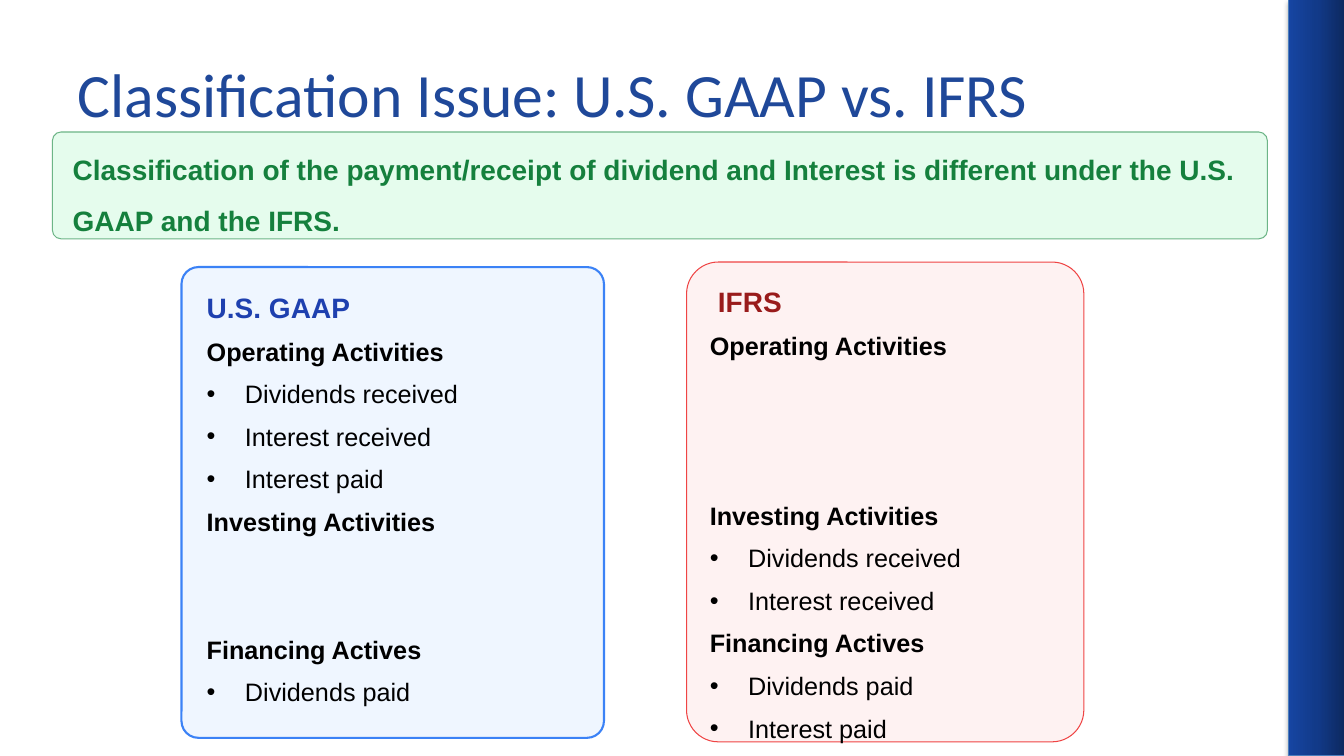
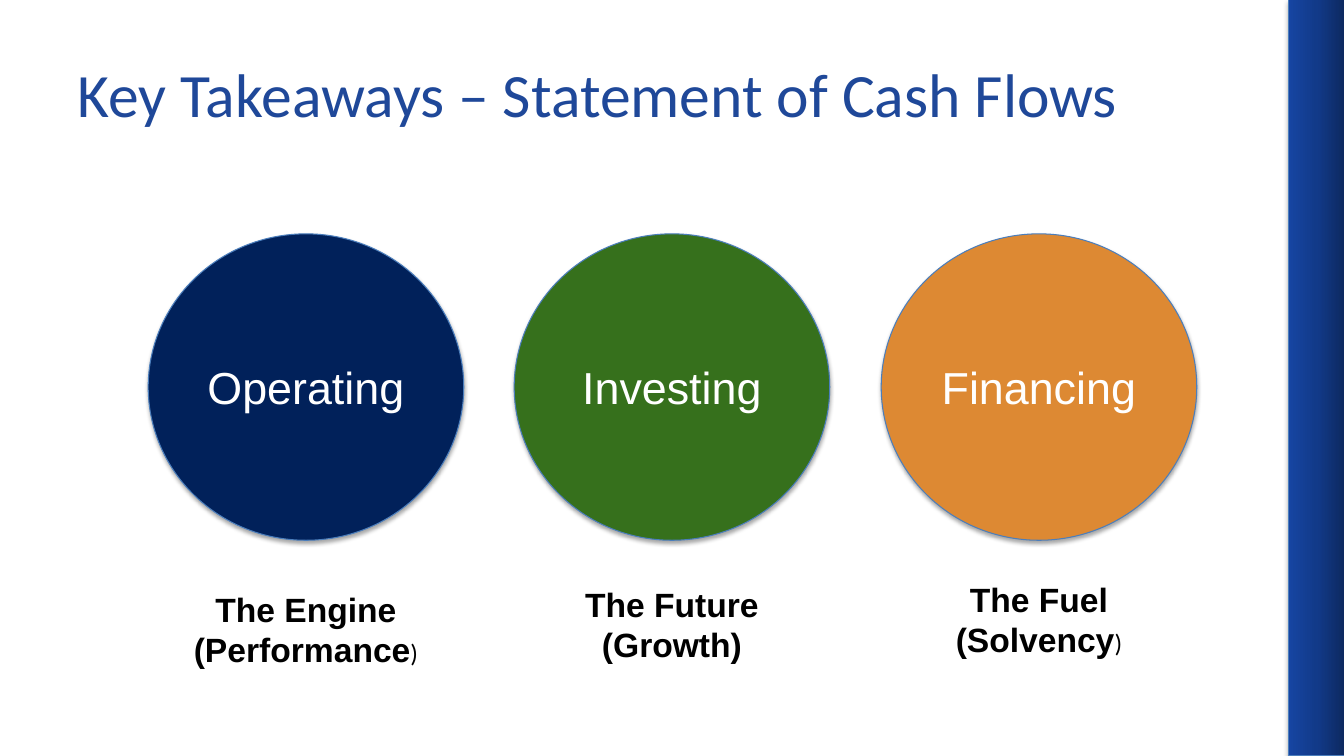
"""Build two slides on the statement of cash flows."""
from copy import deepcopy
from dataclasses import dataclass, field

from lxml import etree
from pptx import Presentation
from pptx import util as u
from pptx.dml.color import RGBColor
from pptx.enum import shapes, text
from pptx.oxml.ns import qn

PX = 9144
INK = {
    "title": "1F4899", "edge": "4B7EBC", "black": "000000", "white": "FFFFFF",
    "deep": "0D2960", "mid": "123A89", "bright": "1645A2",
    "ice": "EFF6FF", "blue": "3B82F6", "navy": "1E40AF",
    "rose": "FEF2F2", "red": "EF4444", "wine": "991B1B",
    "mint": "E5FCED", "sage": "6DB587", "green": "15803D",
    "night": "01215A", "leaf": "36701C", "amber": "DD8933",
}
BASE = {"name": "Arial", "size": u.Pt(18), "bold": False}
HEAD = BASE | {"bold": True}
LARGE = HEAD | {"size": u.Pt(20)}
NAME = BASE | {"size": u.Pt(32)}
LABEL = HEAD | {"size": u.Pt(24)}
SMALL = BASE | {"name": "Calibri"}
TITLE = SMALL | {"size": u.Pt(44)}
LINE = 22.4
GAP = 8
LIST = {"line_spacing": u.Pt(LINE), "space_after": u.Pt(GAP)}
LEFT = {"alignment": text.PP_ALIGN.LEFT}
MID = {"alignment": text.PP_ALIGN.CENTER}
HANG = 38
RIGHT = 180


@dataclass
class Run:
    words: str
    font: dict
    ink: str = "black"


@dataclass
class Para:
    runs: list[Run]
    form: dict = field(default_factory=lambda: LIST)
    left: int = 0
    dot: bool = False


@dataclass
class Box:
    x: int
    y: int
    w: int
    h: int

    def emu(self) -> list[int]:
        return [v * PX for v in (self.x, self.y, self.w, self.h)]


@dataclass
class Card:
    box: Box
    fill: str
    edge: str
    width: float
    round: float
    body: Box
    paras: list[Para]


@dataclass
class Disc:
    name: str
    fill: str
    role: str
    trait: str
    close: dict


def paint(ink: str) -> RGBColor:
    return RGBColor.from_string(INK[ink])


def apply(item, form: dict) -> None:
    for key, value in form.items():
        setattr(item, key, value)


def write(frame, paras: list[Para]) -> None:
    for i, para in enumerate(paras):
        p = frame.add_paragraph() if i else frame.paragraphs[0]
        props = p._p.get_or_add_pPr()
        if para.left:
            props.set("marL", str(para.left * PX))
        if para.dot:
            props.set("indent", str(-para.left * PX))
            etree.SubElement(props, qn("a:buFont"), typeface="Arial")
            etree.SubElement(props, qn("a:buChar"), char="•")
        apply(p, para.form)
        for part in para.runs:
            run = p.add_run()
            run.text = part.words
            apply(run.font, part.font)
            run.font.color.rgb = paint(part.ink)


def place(slide, box: Box, paras: list[Para], inset: bool = False) -> None:
    frame = slide.shapes.add_textbox(*box.emu()).text_frame
    frame.word_wrap = True
    if not inset:
        sides = ("left", "top", "right", "bottom")
        apply(frame, {f"margin_{side}": 0 for side in sides})
    write(frame, paras)


def shape(slide, kind, box: Box, fill: str, edge: str = "edge",
          width: float = 0.75, shade: bool = False):
    item = slide.shapes.add_shape(kind, *box.emu())
    item.shadow.inherit = False
    item.fill.solid()
    item.fill.fore_color.rgb = paint(fill)
    item.line.color.rgb = paint(edge)
    item.line.width = u.Pt(width)
    if shade:
        glow = item._element.spPr.find(qn("a:effectLst"))
        cast = etree.SubElement(glow, qn("a:outerShdw"), blurRad="40000",
                                dist="23000", dir="5400000", rotWithShape="0")
        tint = etree.SubElement(cast, qn("a:srgbClr"), val=INK["black"])
        etree.SubElement(tint, qn("a:alpha"), val="35000")
    return item


def band(slide, master) -> None:
    item = shape(slide, shapes.MSO_SHAPE.RECTANGLE, Box(1278, 0, 56, 750),
                 "mid", shade=True)
    item.fill.gradient()
    item.fill.gradient_angle = RIGHT
    stops = item._element.spPr.find(".//" + qn("a:gsLst"))
    stops.insert(1, deepcopy(stops[0]))
    for i, ink in enumerate(("deep", "mid", "bright")):
        stop = item.fill.gradient_stops[i]
        stop.color.rgb = paint(ink)
        stop.position = i / 2
    master.shapes.element.insert(2, item._element)


def start(prs, words: str):
    slide = prs.slides.add_slide(prs.slide_layouts[5])
    title = slide.shapes.title
    spots = Box(67, 30, 1200, 125).emu()
    apply(title, dict(zip(("left", "top", "width", "height"), spots)))
    title.text_frame.vertical_anchor = text.MSO_ANCHOR.MIDDLE
    write(title.text_frame, [Para([Run(words, TITLE, "title")], LEFT)])
    return slide


def draw(slide, card: Card) -> None:
    item = shape(slide, shapes.MSO_SHAPE.ROUNDED_RECTANGLE, card.box,
                 card.fill, card.edge, card.width)
    item.adjustments[0] = card.round
    place(slide, card.body, card.paras)


def head(words: str, skip: int = 0) -> Para:
    form = LIST | {"space_before": u.Pt(skip * (LINE + GAP))} if skip else LIST
    return Para([Run(words, HEAD)], form)


def dots(*lines: str) -> list[Para]:
    return [Para([Run(line, BASE)], left=HANG, dot=True) for line in lines]


CARDS = [
    Card(Box(180, 265, 419, 467), "ice", "blue", 1.5, 0.04,
         Box(205, 290, 392, 408), [
             Para([Run("U.S. GAAP", LARGE, "navy")]),
             head("Operating Activities"),
             *dots("Dividends received", "Interest received", "Interest paid"),
             head("Investing Activities"),
             head("Financing Actives", 2),
             *dots("Dividends paid")]),
    Card(Box(681, 260, 394, 476), "rose", "red", 0.75, 0.08,
         Box(704, 284, 359, 394), [
             Para([Run("IFRS", LARGE, "wine")], left=8),
             head("Operating Activities"),
             head("Investing Activities", 3),
             *dots("Dividends received", "Interest received"),
             head("Financing Actives"),
             *dots("Dividends paid", "Interest paid")]),
    Card(Box(52, 131, 1205, 106), "mint", "sage", 0.75, 0.08,
         Box(72, 135, 1180, 84), [
             Para([Run("Classification of the payment/receipt of dividend and "
                       "Interest is different under the U.S. GAAP and the "
                       "IFRS.", LARGE, "green")],
                  LIST | {"line_spacing": 1.5})]),
]
DISCS = [
    Disc("Operating", "night", "The Engine", "(Performance", SMALL),
    Disc("Investing", "leaf", "The Future", "(Growth", LABEL),
    Disc("Financing", "amber", "The Fuel", "(Solvency", SMALL),
]


def main() -> None:
    prs = Presentation()
    prs.slide_width, prs.slide_height = u.Inches(13.33), u.Inches(7.5)

    slide = start(prs, "Classification Issue: U.S. GAAP vs. IFRS")
    band(slide, prs.slide_master)
    for card in CARDS:
        draw(slide, card)

    slide = start(prs, "Key Takeaways – Statement of Cash Flows")
    for i, disc in enumerate(DISCS):
        x = 147 + i * 727 // 2
        item = shape(slide, shapes.MSO_SHAPE.OVAL, Box(x, 232, 313, 304),
                     disc.fill, shade=True)
        item.text_frame.vertical_anchor = text.MSO_ANCHOR.MIDDLE
        write(item.text_frame, [Para([Run(disc.name, NAME, "white")], MID)])
        place(slide, Box(x, 579 - 5 * i, 313, 91), [
            Para([Run(disc.role, LABEL)], MID),
            Para([Run(disc.trait, LABEL), Run(")", disc.close)], MID)],
            inset=True)

    prs.save("out.pptx")


if __name__ == "__main__":
    main()
